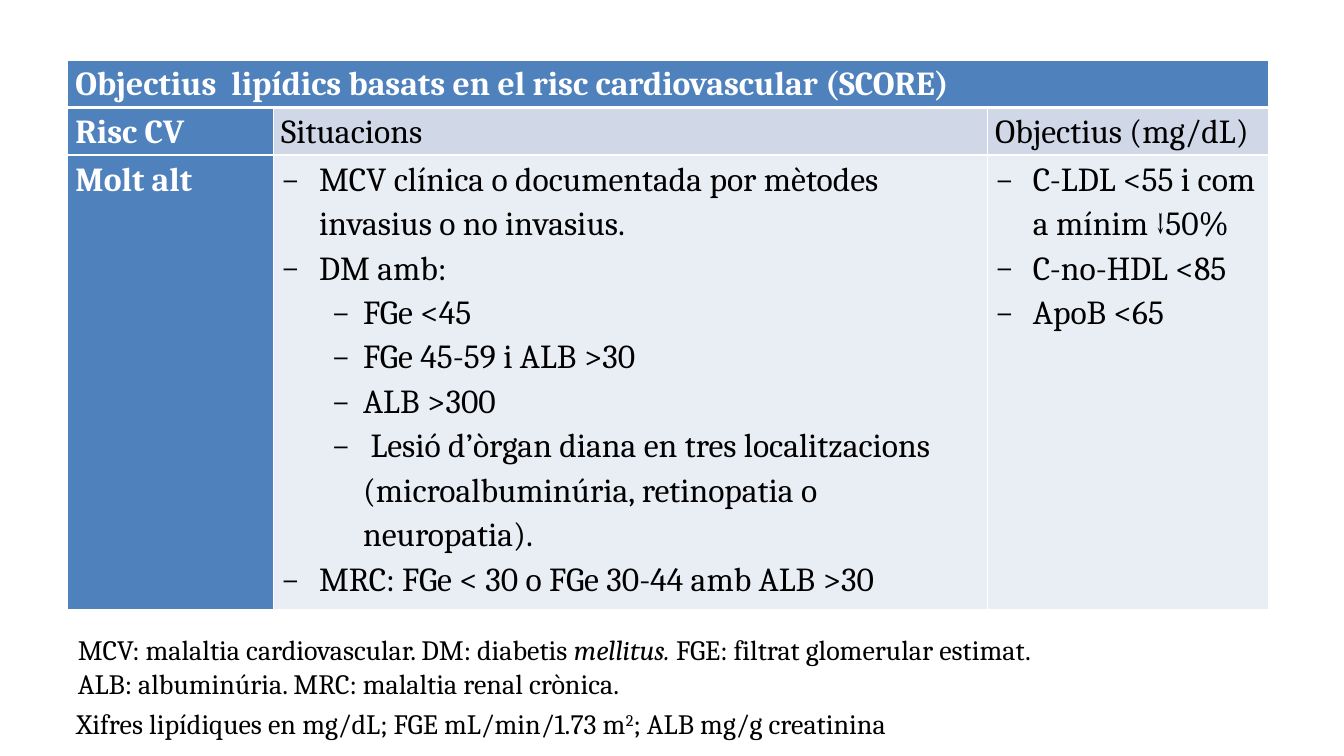
from lxml import etree
from pptx import Presentation
from pptx.dml.color import RGBColor
from pptx.enum.text import MSO_AUTO_SIZE, PP_ALIGN
from pptx.oxml.ns import qn
from pptx.util import Pt

JUSTIFY = PP_ALIGN.JUSTIFY
GROW = MSO_AUTO_SIZE.SHAPE_TO_FIT_TEXT
WHITE, BLACK, BLUE = "FFFFFF", "000000", "4F81BD"
PALE, PALER = "D0D8E8", "E9EDF4"

TITLE = "Objectius  lipídics basats en el risc cardiovascular (SCORE)"
HEADINGS = ["Risc CV", "Situacions", "Objectius (mg/dL)"]
SITUATIONS = [
    (0, "MCV clínica o documentada por mètodes invasius o no invasius."),
    (0, "DM amb:"),
    (1, "FGe <45"),
    (1, "FGe 45-59 i ALB >30"),
    (1, "ALB >300"),
    (1, " Lesió d’òrgan diana en tres localitzacions (microalbuminúria, retinopatia o neuropatia)."),
    (0, "MRC: FGe < 30 o FGe 30-44 amb ALB >30"),
]
TARGETS = [
    (0, "C-LDL <55 i com a mínim ↓50%"),
    (0, "C-no-HDL <85"),
    (0, "ApoB <65"),
]
BULLET_INDENTS = [(27, -27), (58.5, -22.5)]


def color(value):
    return RGBColor.from_string(value)


class SlideBuilder:
    font = "Cambria"
    table_size = 24
    note_size = 20
    spacing = 1.15

    def __init__(self, presentation):
        self.slide = presentation.slides.add_slide(presentation.slide_layouts[6])

    def run(self, paragraph, text, size, ink=BLACK, bold=False, italic=False, baseline=0):
        run = paragraph.add_run()
        run.text = text
        font = run.font
        font.name, font.size, font.bold, font.italic = self.font, Pt(size), bold, italic
        font.color.rgb = color(ink)
        if baseline:
            run._r.get_or_add_rPr().set("baseline", str(baseline * 1000))

    def indent(self, paragraph, margin, first):
        properties = paragraph._p.get_or_add_pPr()
        properties.set("marL", str(Pt(margin)))
        properties.set("indent", str(Pt(first)))
        return properties

    def table(self, left, top, widths, heights):
        frame = self.slide.shapes.add_table(
            len(heights), len(widths), Pt(left), Pt(top), Pt(sum(widths)), Pt(sum(heights)))
        table = frame.table
        for column, width in zip(table.columns, widths):
            column.width = Pt(width)
        for row, height in zip(table.rows, heights):
            row.height = Pt(height)
        return table

    def cell(self, cell, fill, bottom=1, top=1):
        cell.margin_left = cell.margin_right = Pt(5.4)
        cell.margin_top = cell.margin_bottom = 0
        cell.fill.solid()
        cell.fill.fore_color.rgb = color(fill)
        properties = cell._tc.get_or_add_tcPr()
        borders = [("a:lnL", 1), ("a:lnR", 1), ("a:lnT", top), ("a:lnB", bottom)]
        for position, (tag, width) in enumerate(borders):
            line = etree.Element(qn(tag), w=str(Pt(width)))
            solid = etree.SubElement(line, qn("a:solidFill"))
            etree.SubElement(solid, qn("a:srgbClr"), val=WHITE)
            properties.insert(position, line)

    def label(self, cell, text, ink=BLACK, bold=False):
        paragraph = cell.text_frame.paragraphs[0]
        paragraph.alignment = JUSTIFY
        paragraph.line_spacing = self.spacing
        self.run(paragraph, text, self.table_size, ink, bold)

    def bullets(self, cell, items):
        frame = cell.text_frame
        for index, (level, text) in enumerate(items):
            paragraph = frame.add_paragraph() if index else frame.paragraphs[0]
            paragraph.level = level
            paragraph.line_spacing = self.spacing
            properties = self.indent(paragraph, *BULLET_INDENTS[level])
            etree.SubElement(properties, qn("a:buFont"), typeface=self.font)
            etree.SubElement(properties, qn("a:buChar"), char="−")
            self.run(paragraph, text, self.table_size)

    def note(self, left, top, width, height):
        box = self.slide.shapes.add_textbox(Pt(left), Pt(top), Pt(width), Pt(height))
        box.text_frame.word_wrap = True
        box.text_frame.auto_size = GROW
        return box.text_frame.paragraphs[0]


def main():
    presentation = Presentation()
    presentation.slide_width, presentation.slide_height = Pt(960), Pt(540)
    builder = SlideBuilder(presentation)

    table = builder.table(48.5, 42.8, [147, 510, 200.5], [34, 34, 325])
    fills = [[BLUE] * 3, [BLUE, PALE, PALE], [BLUE, PALER, PALER]]
    for row, row_fills in enumerate(fills):
        for column, fill in enumerate(row_fills):
            builder.cell(table.cell(row, column), fill,
                         bottom=3 if row == 0 else 1, top=3 if row == 1 else 1)
    table.cell(0, 0).merge(table.cell(0, 2))
    builder.label(table.cell(0, 0), TITLE, WHITE, True)
    for column, heading in enumerate(HEADINGS):
        first = column == 0
        builder.label(table.cell(1, column), heading, WHITE if first else BLACK, first)
    builder.label(table.cell(2, 0), "Molt alt", WHITE, True)
    builder.bullets(table.cell(2, 1), SITUATIONS)
    builder.bullets(table.cell(2, 2), TARGETS)

    size = builder.note_size
    abbreviations = builder.note(48.5, 448.5, 804, 55.5)
    builder.run(abbreviations, "MCV: malaltia cardiovascular. DM: diabetis ", size)
    builder.run(abbreviations, "mellitus. ", size, italic=True)
    builder.run(abbreviations, "FGE: filtrat glomerular estimat. ", size)
    abbreviations.add_line_break()
    builder.run(abbreviations, "ALB: albuminúria. MRC: malaltia renal crònica.", size)

    units = builder.note(29.5, 497.5, 857.5, 35)
    units.line_spacing = builder.spacing
    builder.indent(units, 18, 0)
    builder.run(units, "Xifres lipídiques en mg/dL; FGE mL/min/1.73 m", size)
    builder.run(units, "2", size, baseline=30)
    builder.run(units, "; ALB mg/g creatinina", size)

    presentation.save("out.pptx")


if __name__ == "__main__":
    main()
